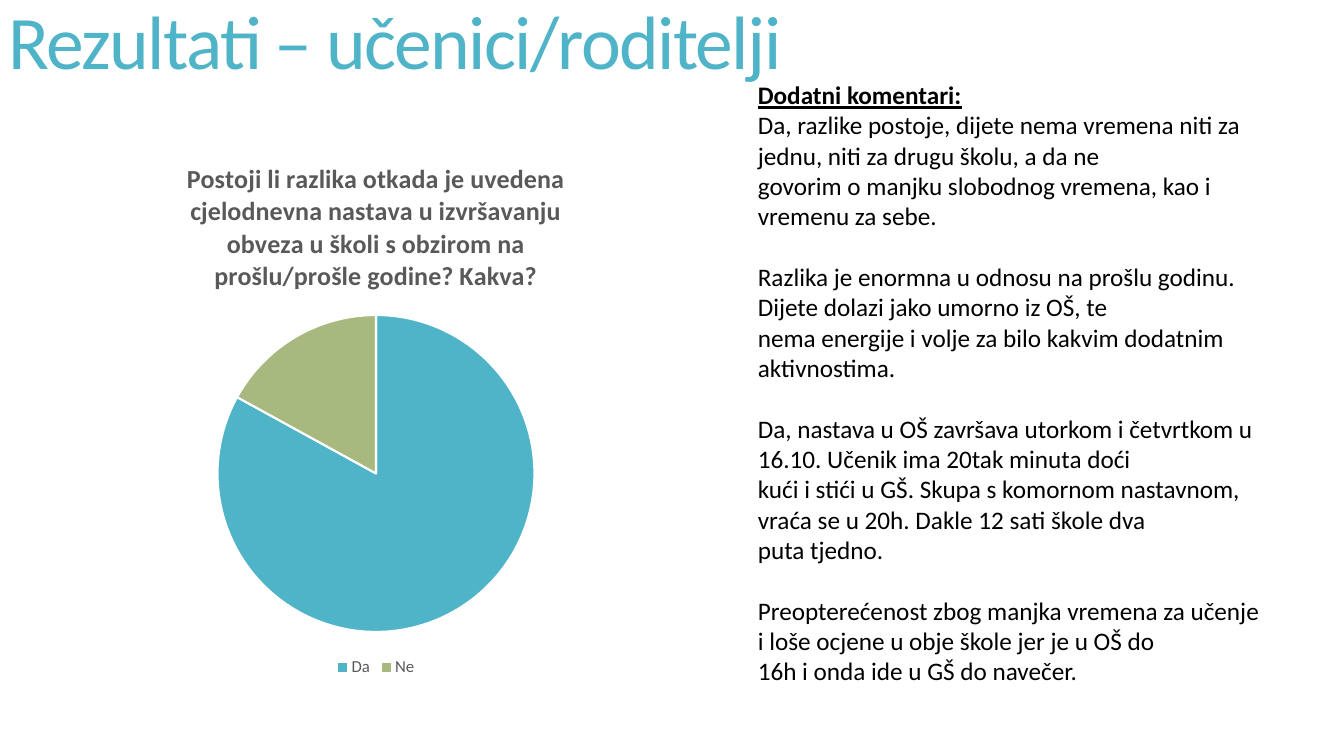
"""Build the survey results slide with a pie chart and the added comments."""
import dataclasses

import pptx
import pptx.chart.data
import pptx.dml.color
import pptx.enum.chart
import pptx.enum.text
import pptx.util

WIDTH, HEIGHT = pptx.util.Inches(13.333), pptx.util.Inches(7.5)


@dataclasses.dataclass(frozen=True)
class Theme:
    font: str = "Calibri"
    accent: str = "50B4C8"
    slices: tuple = ("50B4C8", "A8B97F")
    ink: str = "000000"
    muted: str = "595959"
    paper: str = "FFFFFF"
    title: float = 54
    body: float = 18
    chart_title: float = 18.6
    legend: float = 12
    chart: float = 10
    paragraph_gap: float = 22


THEME = Theme()

TITLE = "Rezultati – učenici/roditelji"
QUESTION = (
    "Postoji li razlika otkada je uvedena cjelodnevna nastava u izvršavanju "
    "obveza u školi s obzirom na prošlu/prošle godine? Kakva?"
)
ANSWERS = {"Da": 83, "Ne": 17}
HEADING = "Dodatni komentari:"
COMMENTS = (
    (
        "Da, razlike postoje, dijete nema vremena niti za jednu, niti za drugu školu, a da ne",
        "govorim o manjku slobodnog vremena, kao i vremenu za sebe.",
    ),
    (
        "Razlika je enormna u odnosu na prošlu godinu. Dijete dolazi jako umorno iz OŠ, te",
        "nema energije i volje za bilo kakvim dodatnim aktivnostima.",
    ),
    (
        "Da, nastava u OŠ završava utorkom i četvrtkom u 16.10. Učenik ima 20tak minuta doći",
        "kući i stići u GŠ. Skupa s komornom nastavnom, vraća se u 20h. Dakle 12 sati škole dva",
        "puta tjedno.",
    ),
    (
        "Preopterećenost zbog manjka vremena za učenje i loše ocjene u obje škole jer je u OŠ do",
        "16h i onda ide u GŠ do navečer.",
    ),
)


def share(left, top, width, height):
    """Turn percentages of the slide into a box in EMU."""
    return [
        int(size * part / 100)
        for size, part in zip((WIDTH, HEIGHT) * 2, (left, top, width, height))
    ]


def rgb(colour):
    return pptx.dml.color.RGBColor.from_string(colour)


def format_font(font, size, colour, bold=False, underline=False):
    font.name = THEME.font
    font.size = pptx.util.Pt(size)
    font.color.rgb = rgb(colour)
    font.bold = bold
    font.underline = underline


def write(p, text, *, size=THEME.body, colour=THEME.ink, bold=False,
          underline=False, before=0, line=1.0, tracking=None):
    """Write one formatted run into a paragraph."""
    p.alignment = pptx.enum.text.PP_ALIGN.LEFT
    p.space_before = pptx.util.Pt(before)
    p.line_spacing = line
    r = p.add_run()
    r.text = text
    format_font(r.font, size, colour, bold, underline)
    if tracking is not None:
        r.font._element.set("spc", str(round(tracking * 100)))


def add_title(s):
    sp = s.shapes.title
    sp.left, sp.top, sp.width, sp.height = share(-0.1, -3.5, 86.3, 19.3)
    tf = sp.text_frame
    tf.vertical_anchor = pptx.enum.text.MSO_ANCHOR.MIDDLE
    write(tf.paragraphs[0], TITLE, size=THEME.title, colour=THEME.accent,
          line=0.85, tracking=-1.2)


def add_pie(s):
    data = pptx.chart.data.CategoryChartData()
    data.categories = list(ANSWERS)
    data.add_series("Series 1", list(ANSWERS.values()))
    chart = s.shapes.add_chart(
        pptx.enum.chart.XL_CHART_TYPE.PIE, *share(6.9, 18.4, 42.15, 71.7), data
    ).chart
    format_font(chart.font, THEME.chart, THEME.ink)

    chart.has_title = True
    p = chart.chart_title.text_frame.paragraphs[0]
    write(p, QUESTION, size=THEME.chart_title, colour=THEME.muted, bold=True)
    p.alignment = pptx.enum.text.PP_ALIGN.CENTER
    chart.chart_title.include_in_layout = False

    chart.has_legend = True
    chart.legend.position = pptx.enum.chart.XL_LEGEND_POSITION.BOTTOM
    chart.legend.include_in_layout = False
    format_font(chart.legend.font, THEME.legend, THEME.muted)

    plot = chart.plots[0]
    plot.vary_by_categories = True
    for i, colour in enumerate(THEME.slices):
        piece = plot.series[0].points[i].format
        piece.fill.solid()
        piece.fill.fore_color.rgb = rgb(colour)
        piece.line.color.rgb = rgb(THEME.paper)
        piece.line.width = pptx.util.Pt(1.5)


def add_comments(s):
    tf = s.shapes.add_textbox(*share(55.65, 9.87, 39.2, 86.1)).text_frame
    tf.word_wrap = True
    tf.auto_size = pptx.enum.text.MSO_AUTO_SIZE.SHAPE_TO_FIT_TEXT
    write(tf.paragraphs[0], HEADING, bold=True, underline=True)
    for i, comment in enumerate(COMMENTS):
        for j, text in enumerate(comment):
            starts_gap = i > 0 and j == 0
            write(tf.add_paragraph(), text,
                  before=THEME.paragraph_gap if starts_gap else 0)


def main():
    prs = pptx.Presentation()
    prs.slide_width, prs.slide_height = WIDTH, HEIGHT
    s = prs.slides.add_slide(prs.slide_layouts.get_by_name("Title Only"))
    add_title(s)
    add_pie(s)
    add_comments(s)
    prs.save("out.pptx")


if __name__ == "__main__":
    main()
